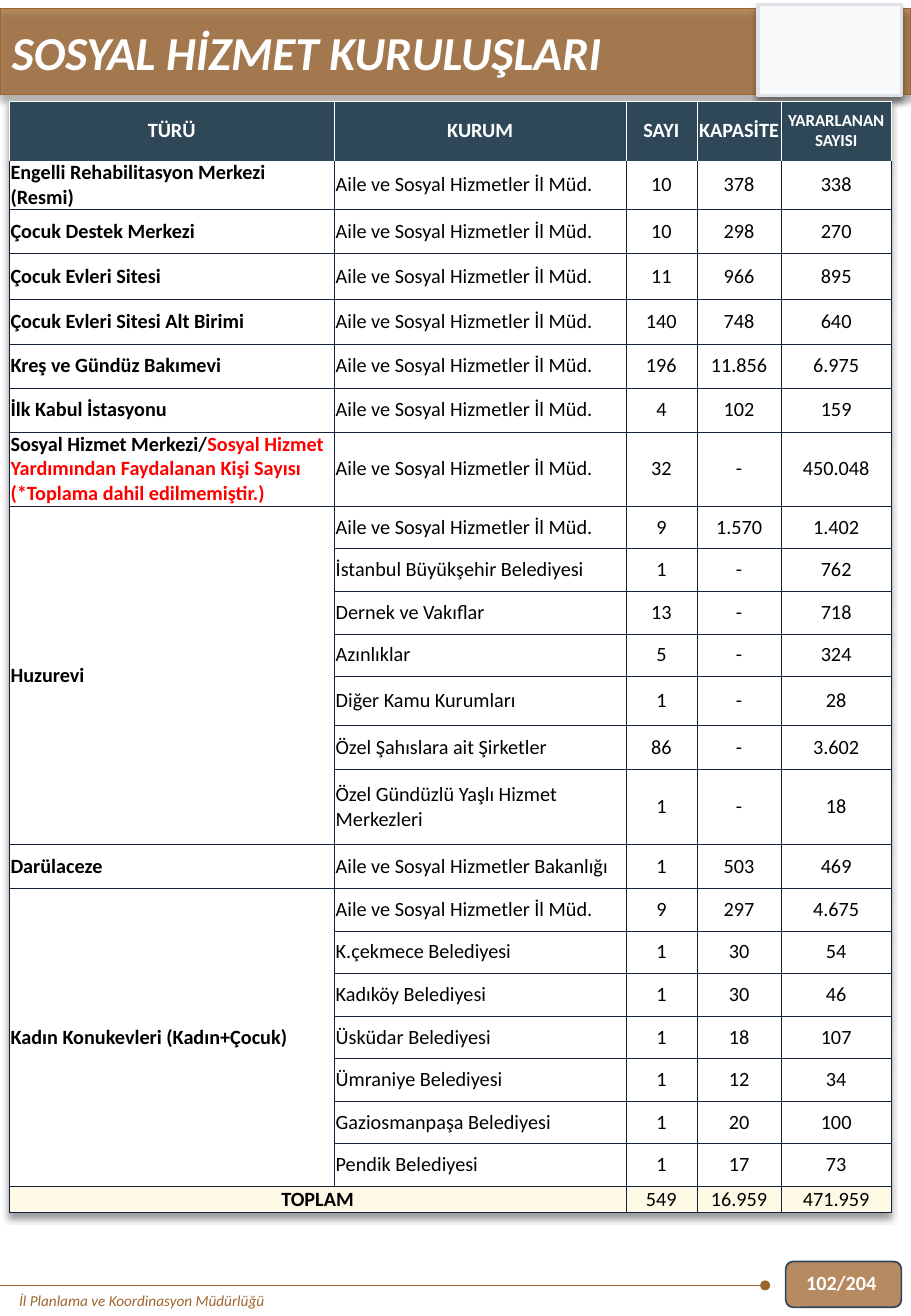
import pptx
import pptx.dml.color
import pptx.enum.shapes
import pptx.enum.text
import pptx.oxml
import pptx.oxml.ns
import pptx.util
from lxml import etree

Cm, Pt = pptx.util.Cm, pptx.util.Pt
SHAPE = pptx.enum.shapes.MSO_SHAPE
ALIGN = pptx.enum.text.PP_ALIGN
MIDDLE = pptx.enum.text.MSO_ANCHOR.MIDDLE

BROWN, SLATE, NAVY, CREAM = "9E652E", "2F4858", "14213D", "FFFAE5"
WHITE, BLACK, RED = "FFFFFF", "000000", "FF0000"
PROVINCE = "Aile ve Sosyal Hizmetler İl Müd."
COLUMN_WIDTHS = [6.8, 6.1, 1.48, 1.77, 2.29]
HEADINGS = ["TÜRÜ", "KURUM", "SAYI", "KAPASİTE", "YARARLANAN\vSAYISI"]
HEADING_HEIGHT, TOTAL_HEIGHT = 1.25, 0.55
TOTALS = ["TOPLAM", "", "549", "16.959", "471.959"]
EXCLUDED_NOTE = "Sosyal Hizmet Yardımından Faydalanan Kişi Sayısı (*Toplama dahil edilmemiştir.)"

# Each service type with its rows: height, institution, count, capacity, users
SERVICES = [
    ("Engelli Rehabilitasyon Merkezi (Resmi)", [(0.92, PROVINCE, "10", "378", "338")]),
    ("Çocuk Destek Merkezi", [(0.92, PROVINCE, "10", "298", "270")]),
    ("Çocuk Evleri Sitesi", [(0.96, PROVINCE, "11", "966", "895")]),
    ("Çocuk Evleri Sitesi Alt Birimi", [(0.93, PROVINCE, "140", "748", "640")]),
    ("Kreş ve Gündüz Bakımevi", [(0.92, PROVINCE, "196", "11.856", "6.975")]),
    ("İlk Kabul İstasyonu", [(0.92, PROVINCE, "4", "102", "159")]),
    ("Sosyal Hizmet Merkezi/", [(1.55, PROVINCE, "32", "-", "450.048")]),
    ("Huzurevi", [
        (0.89, PROVINCE, "9", "1.570", "1.402"),
        (0.89, "İstanbul Büyükşehir Belediyesi", "1", "-", "762"),
        (0.89, "Dernek ve Vakıflar", "13", "-", "718"),
        (0.89, "Azınlıklar", "5", "-", "324"),
        (1.02, "Diğer Kamu Kurumları", "1", "-", "28"),
        (0.93, "Özel Şahıslara ait Şirketler", "86", "-", "3.602"),
        (1.57, "Özel Gündüzlü Yaşlı Hizmet Merkezleri", "1", "-", "18"),
    ]),
    ("Darülaceze", [(0.91, "Aile ve Sosyal Hizmetler Bakanlığı", "1", "503", "469")]),
    ("Kadın Konukevleri (Kadın+Çocuk)", [
        (0.89, PROVINCE, "9", "297", "4.675"),
        (0.89, "K.çekmece Belediyesi", "1", "30", "54"),
        (0.89, "Kadıköy Belediyesi", "1", "30", "46"),
        (0.89, "Üsküdar Belediyesi", "1", "18", "107"),
        (0.89, "Ümraniye Belediyesi", "1", "12", "34"),
        (0.89, "Gaziosmanpaşa Belediyesi", "1", "20", "100"),
        (0.89, "Pendik Belediyesi", "1", "17", "73"),
    ]),
]


def rgb(color):
    return pptx.dml.color.RGBColor.from_string(color)


def format_font(font, size, color, bold=False, italic=False):
    font.name, font.size = "Calibri", Pt(size)
    font.bold, font.italic = bold, italic
    font.color.rgb = rgb(color)


def soft_shadow():
    """Return an effect list with a downward shadow."""
    return pptx.oxml.parse_xml(
        f'<a:effectLst {pptx.oxml.ns.nsdecls("a")}>'
        f'<a:outerShdw blurRad="{Pt(4)}" dist="{Pt(3)}" dir="5400000" algn="t" rotWithShape="0">'
        '<a:srgbClr val="000000"><a:alpha val="40000"/></a:srgbClr>'
        '</a:outerShdw></a:effectLst>')


def add_panel(slide, kind, box, fill, line, line_width, opacity=100, shadow=False):
    panel = slide.shapes.add_shape(kind, *map(Cm, box))
    panel.shadow.inherit = False
    panel.fill.solid()
    panel.fill.fore_color.rgb = rgb(fill)
    panel.line.color.rgb = rgb(line)
    panel.line.width = Pt(line_width)
    properties = panel._element.spPr
    if opacity < 100:
        color = properties.find(pptx.oxml.ns.qn("a:solidFill"))[0]
        etree.SubElement(color, pptx.oxml.ns.qn("a:alpha"), val=str(opacity * 1000))
    if shadow:
        properties.replace(properties.find(pptx.oxml.ns.qn("a:effectLst")), soft_shadow())


def add_label(slide, box, text, size, color, bold=False, italic=False):
    label = slide.shapes.add_textbox(*map(Cm, box)).text_frame
    label.word_wrap = True
    label.text = text
    format_font(label.paragraphs[0].runs[0].font, size, color, bold, italic)


def add_title_band(slide, left, top, width, height):
    add_panel(slide, SHAPE.RECTANGLE, (left, top, width, height), BROWN, BROWN, 1, 75, True)
    add_panel(slide, SHAPE.RECTANGLE, (left + 15.85, top - 0.08, 3, 1.9),
              "F8F9FA", "DEE2E6", 2, shadow=True)
    add_label(slide, (left, top + 0.18, width, 1.45), "SOSYAL HİZMET KURULUŞLARI",
              28, WHITE, True, True)


def add_footer(slide, left, top, width, height):
    middle = top + 0.5
    add_panel(slide, SHAPE.ROUNDED_RECTANGLE, (left + width - 2.62, top, 2.42, height),
              BROWN, SLATE, 1, 75)
    rule = slide.shapes.add_connector(pptx.enum.shapes.MSO_CONNECTOR.STRAIGHT,
                                      Cm(left + 16), Cm(middle), Cm(left), Cm(middle))
    rule.line.color.rgb = rgb(BROWN)
    rule.line.width = Pt(0.5)
    etree.SubElement(rule.line._get_or_add_ln(), pptx.oxml.ns.qn("a:headEnd"), type="oval")
    etree.SubElement(rule._element.spPr, pptx.oxml.ns.qn("a:effectLst"))
    add_label(slide, (left + 0.15, middle, 11.9, 0.64),
              "İl Planlama ve Koordinasyon Müdürlüğü", 9, BROWN, italic=True)
    add_label(slide, (left + width - 2.44, top + 0.05, 2, 0.76), "102/204", 12, WHITE, True)


def set_borders(cell, color, top_color):
    properties = cell._tc.get_or_add_tcPr()
    edges = {"lnL": color, "lnR": color, "lnT": top_color, "lnB": color}
    for position, (edge, edge_color) in enumerate(edges.items()):
        properties.insert(position, pptx.oxml.parse_xml(
            f'<a:{edge} {pptx.oxml.ns.nsdecls("a")} w="{Pt(0.25)}"><a:solidFill>'
            f'<a:srgbClr val="{edge_color}"/></a:solidFill></a:{edge}>'))


def fill_cell(cell, text, fill, border, top_border, centered, size=12, color=BLACK, bold=False):
    cell.margin_left = cell.margin_right = Cm(0.03)
    cell.margin_top = cell.margin_bottom = 0
    cell.vertical_anchor = MIDDLE
    cell.fill.solid()
    cell.fill.fore_color.rgb = rgb(fill)
    set_borders(cell, border, top_border)
    cell.text_frame.text = text
    paragraph = cell.text_frame.paragraphs[0]
    paragraph.alignment = ALIGN.CENTER if centered else ALIGN.LEFT
    format_font(paragraph.font, size, color, bold)
    for run in paragraph.runs:
        format_font(run.font, size, color, bold)


def add_services_table(slide, left, top):
    service_rows = [(service if first == 0 else "", *row)
                    for service, rows in SERVICES for first, row in enumerate(rows)]
    heights = [HEADING_HEIGHT, *(row[1] for row in service_rows), TOTAL_HEIGHT]
    table = slide.shapes.add_table(len(heights), len(COLUMN_WIDTHS), Cm(left), Cm(top),
                                   Cm(sum(COLUMN_WIDTHS)), Cm(sum(heights))).table
    table.horz_banding = False
    table._tbl.tblPr.insert(0, soft_shadow())
    for column, width in zip(table.columns, COLUMN_WIDTHS):
        column.width = Cm(width)
    for row, height in zip(table.rows, heights):
        row.height = Cm(height)

    last = len(heights) - 1
    for column, heading in enumerate(HEADINGS):
        fill_cell(table.cell(0, column), heading, SLATE, WHITE, WHITE, True,
                  10 if column == 4 else 12, WHITE, True)
        fill_cell(table.cell(last, column), TOTALS[column], CREAM, NAVY, NAVY, True,
                  bold=column == 0)
    for index, (service, _, *values) in enumerate(service_rows, 1):
        for column, text in enumerate([service, *values]):
            fill_cell(table.cell(index, column), text, WHITE, NAVY,
                      WHITE if index == 1 else NAVY, column > 1, bold=column == 0)
        if service == "Sosyal Hizmet Merkezi/":
            note = table.cell(index, 0).text_frame.paragraphs[0].add_run()
            note.text = EXCLUDED_NOTE
            format_font(note.font, 12, RED, True)

    start = 1
    for _, rows in SERVICES:
        if len(rows) > 1:
            table.cell(start, 0).merge(table.cell(start + len(rows) - 1, 0))
        start += len(rows)
    table.cell(last, 0).merge(table.cell(last, 1))


def main():
    presentation = pptx.Presentation()
    presentation.slide_width, presentation.slide_height = Cm(19.05), Cm(27.51)
    slide = presentation.slides.add_slide(presentation.slide_layouts[6])
    add_title_band(slide, 0, 0.18, 19.05, 1.8)
    add_services_table(slide, 0.19, 2.11)
    add_footer(slide, 0, 26.37, 19.05, 0.96)
    presentation.save("out.pptx")


if __name__ == "__main__":
    main()
